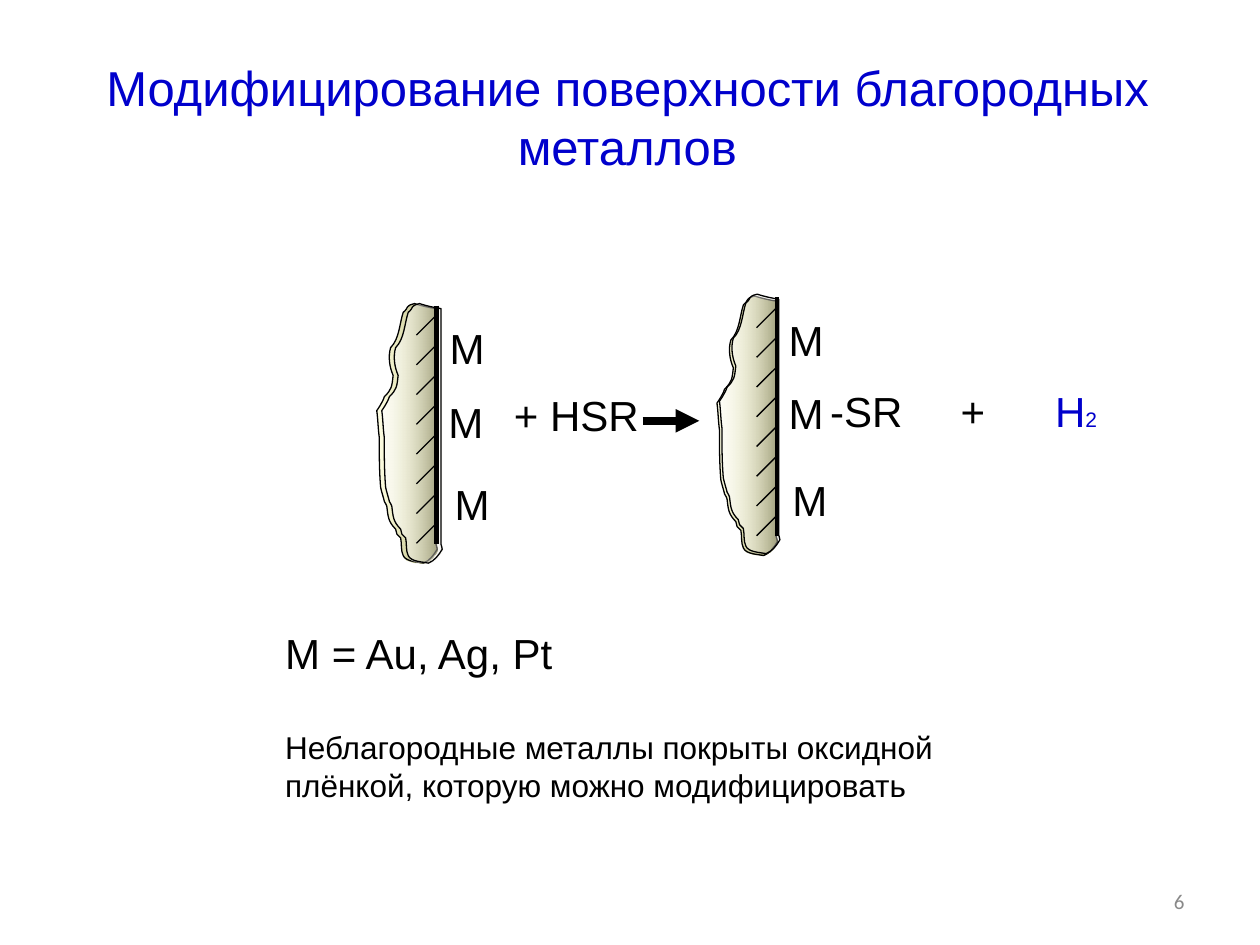
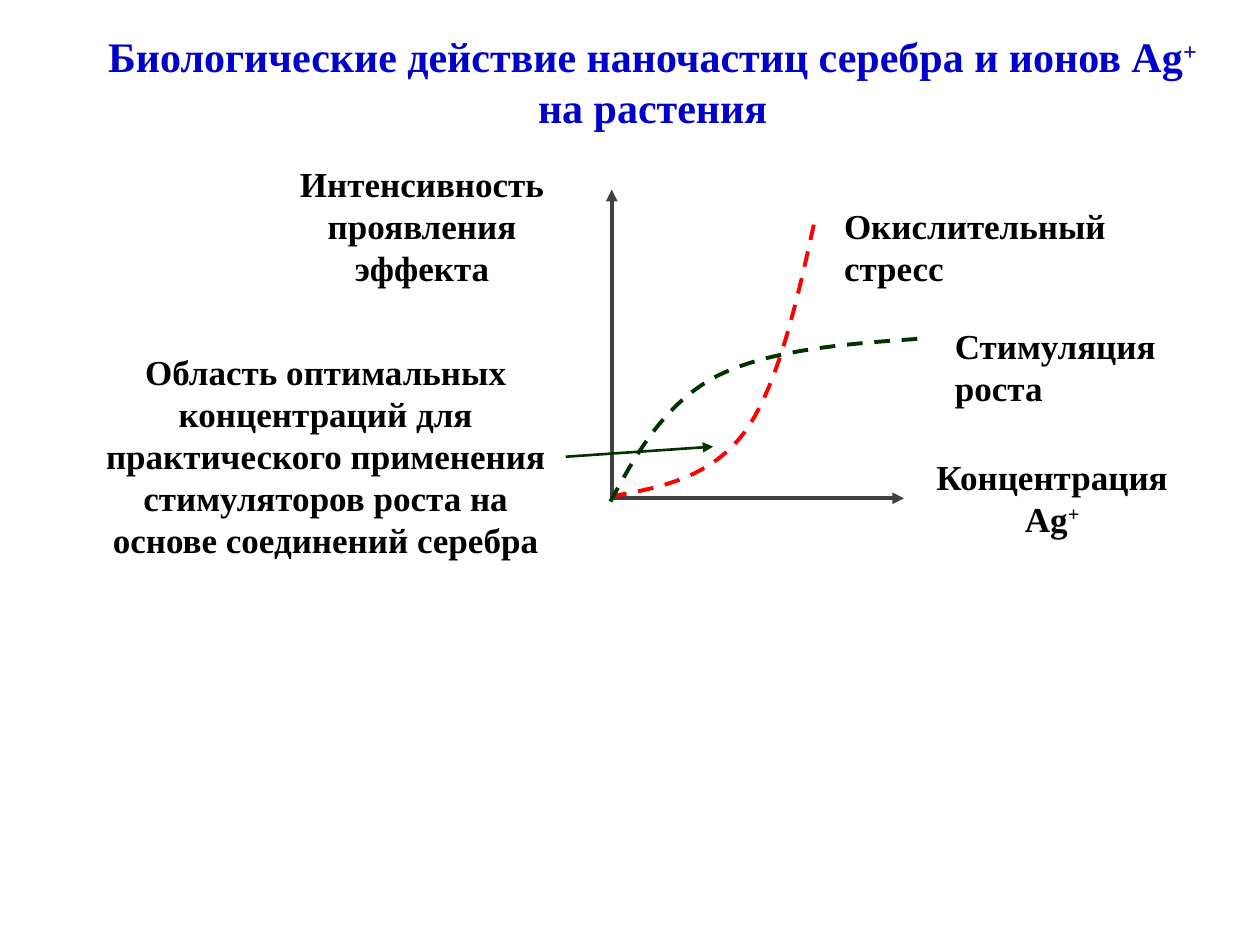
from lxml import etree
from pptx import Presentation
from pptx import util as u
from pptx.dml.color import RGBColor
from pptx.enum import dml, shapes, text
from pptx.oxml.ns import qn

# Colours
BLUE = RGBColor(0x00, 0x00, 0xCC)
BLACK = RGBColor(0x00, 0x00, 0x00)
WHITE = RGBColor(0xFF, 0xFF, 0xFF)
GREY = RGBColor(0x89, 0x89, 0x89)
AXIS = RGBColor(0x40, 0x40, 0x40)
RED = RGBColor(0xFF, 0x00, 0x00)
GREEN = RGBColor(0x00, 0x33, 0x00)
YELLOW = RGBColor(0xFF, 0xFF, 0x99)
OLIVE = RGBColor(0x76, 0x76, 0x47)
CREAM = RGBColor(0xEE, 0xEC, 0xE1)

# Text formats
SANS = {"name": "Arial", "size": 24, "color": BLACK}
SERIF = {"name": "Times New Roman", "size": 20, "color": BLACK, "bold": True}
PAGE_NUMBER = {"name": "Calibri", "size": 12, "color": GREY}
RAISED = {"baseline": 30000}
LEFT, CENTER, RIGHT = (text.PP_ALIGN.LEFT, text.PP_ALIGN.CENTER,
                       text.PP_ALIGN.RIGHT)

# Grid of 100 columns by 75 rows
COLUMNS, ROWS = 100, 75

# Gradient stops of a metal slab: colour and opacity in percent
BACK_FILL = ((YELLOW, 24), (OLIVE, 100))
FRONT_FILL = ((WHITE, 77), (CREAM, 33))

# Ragged outline of a slab: a start point, then three points for each curve
SLAB_OUTLINE = [
    (4.7, 0.4),
    (4.1, 0.3), (3.6, 0.2), (3, 0),
    (2.2, 0.2), (2.6, 0.3), (2.1, 0.7),
    (1.8, 1.6), (1.8, 2.8), (1.1, 3.5),
    (0.9, 4.2), (1, 5), (1.3, 5.7),
    (1.2, 6.6), (1.2, 6.8), (0.6, 7.4),
    (0.5, 7.8), (0, 8.5), (0, 8.5),
    (0.1, 9.2), (0.1, 9.9), (0.2, 10.6),
    (0.2, 11.9), (0.2, 13.2), (0.3, 14.5),
    (0.3, 14.7), (0.6, 15.6), (0.6, 15.7),
    (0.7, 15.8), (0.8, 16.1), (0.8, 16.1),
    (0.9, 16.9), (0.9, 17.3), (1.5, 17.9),
    (1.5, 18), (1.6, 18.2), (1.6, 18.3),
    (1.7, 18.4), (1.8, 18.5), (1.9, 18.6),
    (2, 19.1), (1.9, 19.6), (2.1, 20),
    (2.3, 20.5), (3.3, 20.5), (3.7, 20.6),
    (4.2, 20.4), (4.5, 20), (4.8, 19.5),
    (4.8, 19.4), (4.7, 19.1), (4.7, 19.1),
]
HATCH_COUNT, HATCH_STEP, HATCH_SIZE = 8, 2.36, 1.6


class Board:
    """The deck, its grid and the slide being drawn."""

    def __init__(self):
        self.deck = Presentation()
        self.deck.slide_width, self.deck.slide_height = u.Inches(10), u.Inches(7.5)
        self.page = None

    def new_page(self):
        self.page = self.deck.slides.add_slide(self.deck.slide_layouts[6])

    def x(self, columns):
        return round(self.deck.slide_width * columns / COLUMNS)

    def y(self, rows):
        return round(self.deck.slide_height * rows / ROWS)

    def add_spans(self, para, spans, style):
        for words, changes in spans:
            span = para.add_run()
            span.text = words
            for key, value in {**style, **changes}.items():
                if key == "color":
                    span.font.color.rgb = value
                elif key == "size":
                    span.font.size = u.Pt(value)
                elif key == "baseline":
                    span.font._element.set("baseline", str(value))
                else:
                    setattr(span.font, key, value)

    def text(self, area, paragraphs, style, align=LEFT, wrap=True, middle=False,
             gap=0, tabs=(), inset=None):
        """Each paragraph is a string or a list of (words, changes)."""
        left, top, width, height = area
        box = self.page.shapes.add_textbox(self.x(left), self.y(top),
                                           self.x(width), self.y(height))
        frame = box.text_frame
        frame.word_wrap = wrap
        if middle:
            frame.vertical_anchor = text.MSO_ANCHOR.MIDDLE
        if inset is not None:
            for side in ("left", "top", "right", "bottom"):
                setattr(frame, f"margin_{side}", u.Inches(inset))
        for i, spans in enumerate(paragraphs):
            para = frame.paragraphs[0] if i == 0 else frame.add_paragraph()
            para.alignment = align
            if i:
                para.space_before = u.Pt(gap)
            if tabs:
                stops = etree.SubElement(para._p.get_or_add_pPr(), qn("a:tabLst"))
                for column in tabs:
                    etree.SubElement(stops, qn("a:tab"),
                                     pos=str(self.x(column)), algn="l")
            self.add_spans(para, [(spans, {})] if isinstance(spans, str) else spans,
                           style)

    def title(self, area, spans, style, **options):
        self.text(area, [spans], {**style, "color": BLUE}, CENTER, **options)

    def line(self, start, end, color=BLACK, width=0.75, arrow=False):
        link = self.page.shapes.add_connector(
            shapes.MSO_CONNECTOR.STRAIGHT, self.x(start[0]), self.y(start[1]),
            self.x(end[0]), self.y(end[1]))
        link.line.color.rgb = color
        link.line.width = u.Pt(width)
        if arrow:
            etree.SubElement(link.line._get_or_add_ln(), qn("a:tailEnd"),
                             type="triangle")
        etree.SubElement(link._element.spPr, qn("a:effectLst"))

    def curve(self, points, color=BLACK, width=0.75, dashed=False, stops=None):
        """An open curve, or a closed outline when gradient stops are given."""
        corners = [(self.x(x), self.y(y)) for x, y in points]
        builder = self.page.shapes.build_freeform(*corners[0])
        builder.add_line_segments(corners[1:], close=bool(stops))
        shape = builder.convert_to_shape()
        self.bend(shape)
        shape.shadow.inherit = False
        if stops:
            self.gradient(shape, stops)
        else:
            shape.fill.background()
        shape.line.color.rgb = color
        shape.line.width = u.Pt(width)
        if dashed:
            shape.line.dash_style = dml.MSO_LINE.DASH

    def bend(self, shape):
        """Join every three straight segments into one cubic curve."""
        segments = list(shape._element.spPr.iter(qn("a:lnTo")))
        for i in range(0, len(segments), 3):
            bezier = etree.Element(qn("a:cubicBezTo"))
            segments[i].addprevious(bezier)
            for segment in segments[i:i + 3]:
                bezier.append(segment[0])
                segment.getparent().remove(segment)

    def gradient(self, shape, stops):
        shape.fill.gradient()
        shape.fill.gradient_angle = 0
        for stop, (color, _) in zip(shape.fill.gradient_stops, stops):
            stop.color.rgb = color
        tints = shape._element.spPr.iter(qn("a:srgbClr"))
        for tint, (_, opacity) in zip(tints, stops):
            if opacity < 100:
                etree.SubElement(tint, qn("a:alpha"), val=str(opacity * 1000))

    def slab(self, left, top, shift, edge_top):
        """A metal slab in two layers with a hatched working edge."""
        for dx, dy, stops in ((0, 0, BACK_FILL), (*shift, FRONT_FILL)):
            self.curve([(left + dx + x, top + dy + y) for x, y in SLAB_OUTLINE],
                       stops=stops)
        edge = left + 4.75
        self.line((edge, edge_top), (edge, edge_top + 18.9), width=2.5)
        for i in range(HATCH_COUNT):
            y = top + 0.9 + i * HATCH_STEP
            self.line((edge, y), (edge - HATCH_SIZE, y + HATCH_SIZE))


def surface_page(board):
    board.new_page()
    board.title((4.8, 3, 90, 12.5),
                "Модифицирование поверхности благородных металлов",
                {**SANS, "size": 28}, middle=True)

    # Metal before and after the reaction
    board.slab(29.9, 24.1, (0.4, 0), 24.25)
    board.slab(56.9, 23.5, (0.2, -0.15), 23.6)
    for left, top in ((34.7, 25.1), (34.6, 31), (35.1, 37.5),
                      (61.6, 24.5), (61.6, 30.3), (61.9, 37.2)):
        board.text((left, top, 4.8, 5), ["M"], SANS, wrap=False)

    # Reaction
    board.text((39.8, 30.4, 11.9, 5), ["+ HSR"], SANS, wrap=False)
    board.line((51, 33.4), (55.5, 33.4), width=4.5, arrow=True)
    board.text((64.9, 30.1, 24.5, 5),
               [[("-SR\t+\t", {}), ("Н", {"color": BLUE}),
                 ("2", {"color": BLUE, "size": 12})]],
               SANS, tabs=(10.35, 17.85))

    # Notes on the metals
    board.text((21.65, 49.3, 55.9, 15.1),
               ["M = Au, Ag, Pt",
                [("Неблагородные металлы покрыты оксидной плёнкой, "
                  "которую можно модифицировать", {"size": 18})]],
               SANS, gap=28.7)
    board.text((71.7, 69.5, 23.3, 4), ["6"], PAGE_NUMBER, RIGHT, middle=True)


def silver_page(board):
    board.new_page()

    # Labels of the curves and axes
    for area, spans, align in (
            ((66, 15.7, 26.8, 7.7), "Окислительный стресс", LEFT),
            ((74.8, 25.25, 21.6, 7.7), "Стимуляция роста", LEFT),
            ((72.9, 35.65, 21.2, 7.7),
             [("Концентрация Ag", {}), ("+", RAISED)], CENTER),
            ((20.1, 12.4, 26.8, 11.1), "Интенсивность проявления эффекта", CENTER),
            ((6.8, 27.3, 38.1, 17.8),
             "Область оптимальных концентраций для практического применения "
             "стимуляторов роста на основе соединений серебра", CENTER)):
        board.text(area, [spans], SERIF, align)

    # Axes
    origin = (48.55, 39.55)
    for end in ((48.55, 15.05), (71.75, 39.55)):
        board.line(origin, end, AXIS, 2.25, arrow=True)

    # Oxidative stress and growth stimulation
    board.curve([(48.5, 39.4), (52.5, 38.7), (56.4, 37.9), (59.1, 34.3),
                 (61.7, 30.7), (63.2, 24.2), (64.6, 17.8)], RED, 2.25, dashed=True)
    board.curve([(72.8, 26.9), (66.9, 27.3), (60.9, 27.8), (56.8, 29.9),
                 (52.7, 32.1), (50.5, 36), (48.4, 39.9)], GREEN, 2.25, dashed=True)
    board.line((44.9, 36.25), (56.6, 35.45), GREEN, 1.5, arrow=True)

    board.title((6.8, 2.05, 90, 8.9),
                [("Биологические действие наночастиц серебра и ионов Ag", {}),
                 ("+ ", RAISED), ("на растения", {})],
                {**SERIF, "size": 24}, inset=0.04)


def main():
    board = Board()
    surface_page(board)
    silver_page(board)
    board.deck.save("out.pptx")


if __name__ == "__main__":
    main()
